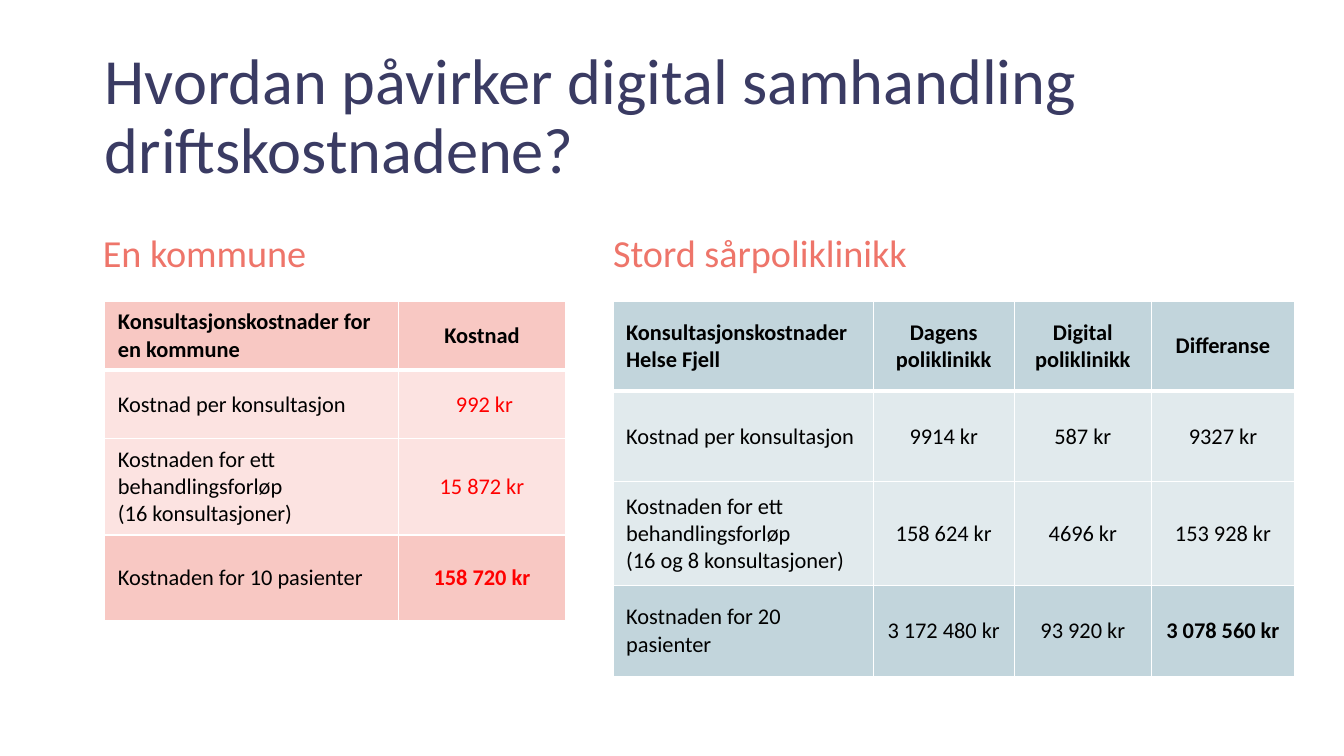
from lxml.etree import SubElement
from pptx import Presentation
from pptx.dml.color import RGBColor
from pptx.enum.text import MSO_ANCHOR, MSO_AUTO_SIZE, PP_ALIGN
from pptx.oxml.ns import qn
from pptx.util import Inches, Pt

FONT = "Calibri"
NAVY = RGBColor(0x3A, 0x3B, 0x63)
CORAL = RGBColor(0xEE, 0x75, 0x6A)
BLACK = RGBColor(0x00, 0x00, 0x00)
RED = RGBColor(0xFF, 0x00, 0x00)
BLUE_DARK = RGBColor(0xC2, 0xD5, 0xDC)
BLUE_LIGHT = RGBColor(0xE1, 0xEA, 0xED)
PINK_DARK = RGBColor(0xF8, 0xC8, 0xC3)
PINK_LIGHT = RGBColor(0xFC, 0xE3, 0xE1)

# Content
TITLE = "Hvordan påvirker digital samhandling driftskostnadene?"
HEADINGS = [("En kommune", 1.02, 3.31), ("Stord sårpoliklinikk", 6.08, 3.92)]
TABLES = [
    {
        "left": 6.08,
        "columns": [2.58, 1.4, 1.36, 1.42],
        "heights": [0.89, 0.9, 1.03, 0.9],
        "fills": (BLUE_DARK, BLUE_LIGHT),
        "value_color": BLACK,
        "rows": [
            ["Konsultasjonskostnader Helse Fjell", "Dagens poliklinikk",
             "Digital poliklinikk", "Differanse"],
            ["Kostnad per konsultasjon", "9914 kr", "587 kr", "9327 kr"],
            ["Kostnaden for ett behandlingsforløp\n(16 og 8 konsultasjoner)",
             "158 624 kr", "4696 kr", "153 928 kr"],
            ["Kostnaden for 20 pasienter", "3 172 480 kr", "93 920 kr", "3 078 560 kr"],
        ],
    },
    {
        "left": 1.04,
        "columns": [2.91, 1.66],
        "heights": [0.67, 0.68, 0.93, 0.85],
        "fills": (PINK_DARK, PINK_LIGHT),
        "value_color": RED,
        "rows": [
            ["Konsultasjonskostnader for en kommune", "Kostnad"],
            ["Kostnad per konsultasjon", " 992 kr"],
            ["Kostnaden for ett behandlingsforløp\n(16 konsultasjoner)", "15 872 kr"],
            ["Kostnaden for 10 pasienter", "158 720 kr"],
        ],
    },
]
TABLE_TOP = 2.99


def style_font(para, size, color, bold=False):
    para.font.name = FONT
    para.font.size = Pt(size)
    para.font.color.rgb = color
    para.font.bold = bold


def clear_margins(frame):
    frame.margin_left = frame.margin_right = frame.margin_top = frame.margin_bottom = 0
    frame.word_wrap = True
    frame.auto_size = MSO_AUTO_SIZE.NONE
    frame.vertical_anchor = MSO_ANCHOR.TOP


def add_borders(cell, top, bottom):
    properties = cell._tc.get_or_add_tcPr()
    for side, width in (("L", 1), ("R", 1), ("T", top), ("B", bottom)):
        line = SubElement(properties, qn(f"a:ln{side}"), w=str(Pt(width)))
        fill = SubElement(line, qn("a:solidFill"))
        SubElement(fill, qn("a:srgbClr"), val="FFFFFF")


def add_cost_table(page, data):
    rows, columns, heights = data["rows"], data["columns"], data["heights"]
    table = page.shapes.add_table(
        len(rows), len(columns), Inches(data["left"]), Inches(TABLE_TOP),
        Inches(sum(columns)), Inches(sum(heights))).table
    for column, width in zip(table.columns, columns):
        column.width = Inches(width)
    last_row, last_column = len(rows) - 1, len(columns) - 1
    dark, light = data["fills"]
    for r, texts in enumerate(rows):
        table.rows[r].height = Inches(heights[r])
        for c, text in enumerate(texts):
            cell = table.cell(r, c)
            # Thick rule under the header row
            add_borders(cell, top=3 if r == 1 else 1, bottom=3 if r == 0 else 1)
            cell.fill.solid()
            cell.fill.fore_color.rgb = dark if r in (0, last_row) else light
            cell.vertical_anchor = MSO_ANCHOR.MIDDLE
            cell.margin_left = cell.margin_right = Inches(0.13)
            cell.margin_top = cell.margin_bottom = Inches(0.07)
            cell.text = text
            # Bold for the headers and the bottom-line total
            bold = r == 0 or (r, c) == (last_row, last_column)
            color = data["value_color"] if r and c else BLACK
            for para in cell.text_frame.paragraphs:
                para.alignment = PP_ALIGN.CENTER if c else PP_ALIGN.LEFT
                style_font(para, 16, color, bold)


deck = Presentation()
deck.slide_width, deck.slide_height = Inches(13.33), Inches(7.5)
page = deck.slides.add_slide(deck.slide_layouts[5])

# Title
title = page.shapes.title
title.left, title.top = Inches(1.04), Inches(0.48)
title.width, title.height = Inches(11.6), Inches(1.39)
title.text_frame.text = TITLE
clear_margins(title.text_frame)
para = title.text_frame.paragraphs[0]
para.alignment = PP_ALIGN.LEFT
para.line_spacing = 0.9
style_font(para, 46, NAVY)

# Table headings
for text, left, width in HEADINGS:
    box = page.shapes.add_textbox(Inches(left), Inches(2.27), Inches(width), Inches(0.46))
    box.text_frame.text = text
    clear_margins(box.text_frame)
    style_font(box.text_frame.paragraphs[0], 27.3, CORAL)

# Cost tables
for data in TABLES:
    add_cost_table(page, data)

deck.save("out.pptx")
